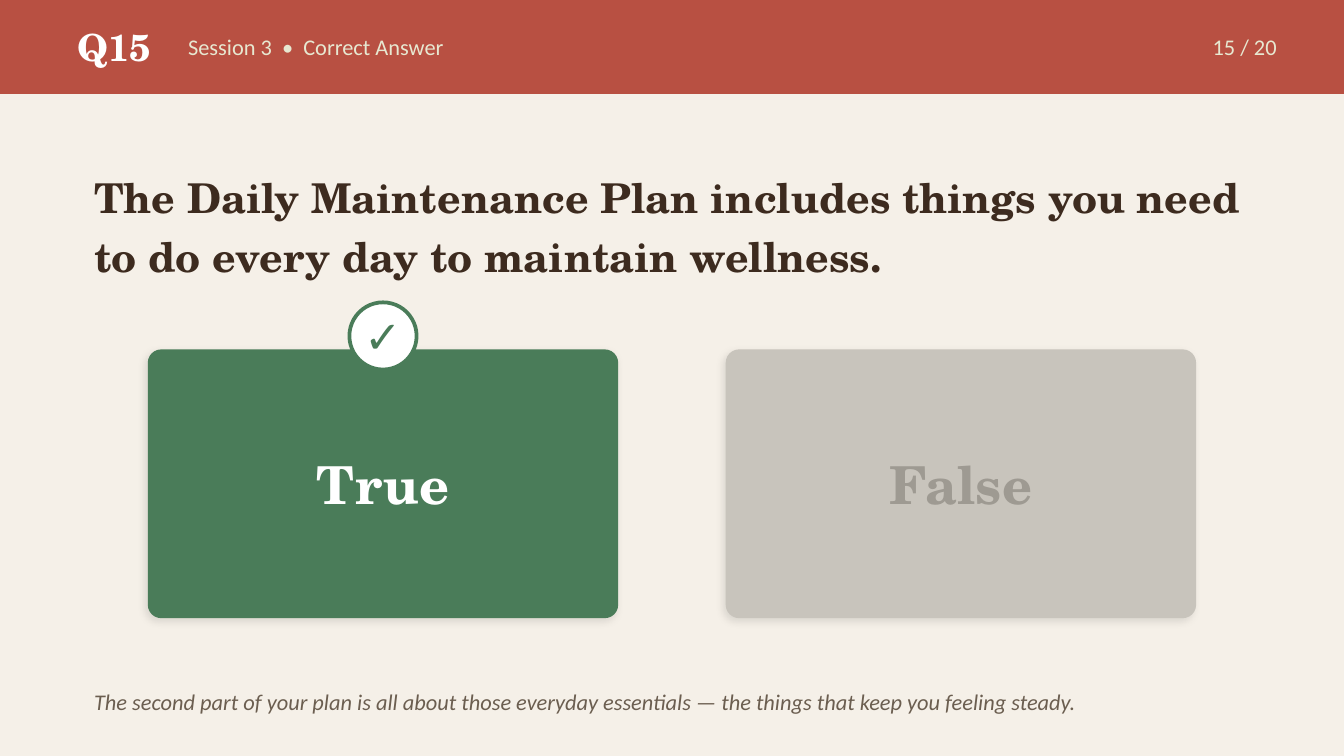
from dataclasses import dataclass
from lxml.etree import SubElement
from pptx import Presentation
from pptx.dml.color import RGBColor
from pptx.enum.shapes import MSO_SHAPE
from pptx.enum.text import MSO_ANCHOR, MSO_AUTO_SIZE, PP_ALIGN
from pptx.oxml.ns import qn
from pptx.util import Pt


@dataclass(frozen=True)
class Theme:
    """Hold the colours, fonts and type sizes."""
    paper: str = "F5F0E8"
    brick: str = "B85042"
    cream: str = "E7E8D1"
    white: str = "FFFFFF"
    ink: str = "3D2B1F"
    green: str = "4A7C59"
    stone: str = "C8C4BC"
    ash: str = "9E9A92"
    umber: str = "6B5E50"
    serif: str = "TeX Gyre Schola"
    sans: str = "Calibri"
    small: int = 12
    badge: int = 20
    head: int = 22
    tick: int = 24
    answer: int = 28


def write(frame, text, *, size, color, font, bold=False, italic=False,
          align=PP_ALIGN.LEFT, anchor=MSO_ANCHOR.MIDDLE, lead=None):
    """Fill a text frame with one styled paragraph."""
    frame.word_wrap = True
    frame.auto_size = MSO_AUTO_SIZE.NONE
    frame.vertical_anchor = anchor
    frame.margin_left = frame.margin_right = 0
    frame.margin_top = frame.margin_bottom = 0
    line = frame.paragraphs[0]
    line.alignment = align
    line.space_before = Pt(0)
    if lead:
        line.line_spacing = lead
    run = line.add_run()
    run.text = text
    run.font.name = font
    run.font.size = Pt(size)
    run.font.bold = bold
    run.font.italic = italic
    run.font.color.rgb = RGBColor.from_string(color)


class Deck:
    """Draw styled parts on the current slide."""

    def __init__(self, theme, wide, high):
        """Start a deck of the given size."""
        self.theme = theme
        self.file = Presentation()
        self.file.slide_width = Pt(wide)
        self.file.slide_height = Pt(high)
        self.slide = None

    def page(self):
        """Add a slide with a title and a plain ground."""
        self.slide = self.file.slides.add_slide(self.file.slide_layouts[5])
        fill = self.slide.background.fill
        fill.solid()
        fill.fore_color.rgb = RGBColor.from_string(self.theme.paper)

    def title(self, text, box, **style):
        """Place and fill the title."""
        head = self.slide.shapes.title
        head.left, head.top, head.width, head.height = map(Pt, box)
        write(head.text_frame, text, **style)

    def text(self, text, box, **style):
        """Add a text box."""
        area = self.slide.shapes.add_textbox(*map(Pt, box))
        write(area.text_frame, text, **style)

    def shape(self, kind, box, color, edge=None):
        """Add a flat shape, with an edge if one is named."""
        form = self.slide.shapes.add_shape(kind, *map(Pt, box))
        form.shadow.inherit = False
        form.fill.solid()
        form.fill.fore_color.rgb = RGBColor.from_string(color)
        if edge:
            form.line.color.rgb = RGBColor.from_string(edge)
            form.line.width = Pt(2)
        else:
            form.line.fill.background()
        return form

    def card(self, text, box, fill, color):
        """Add a rounded answer card with a soft shadow."""
        form = self.shape(MSO_SHAPE.ROUNDED_RECTANGLE, box, fill)
        form.adjustments[0] = 0.05
        glow = form.element.spPr.find(qn("a:effectLst"))
        drop = SubElement(glow, qn("a:outerShdw"), blurRad=str(Pt(4)),
                          dist=str(Pt(2)), dir=str(135 * 60000),
                          algn="bl", rotWithShape="0")
        tint = SubElement(drop, qn("a:srgbClr"), val="000000")
        SubElement(tint, qn("a:alpha"), val="10000")
        write(form.text_frame, text, size=self.theme.answer, color=color,
              font=self.theme.serif, bold=True, align=PP_ALIGN.CENTER)

    def mark(self, left, top, side):
        """Add the round tick mark."""
        theme = self.theme
        form = self.shape(MSO_SHAPE.OVAL, (left, top, side, side),
                          theme.white, theme.green)
        write(form.text_frame, "✓", size=theme.tick, color=theme.green,
              font=theme.sans, bold=True, align=PP_ALIGN.CENTER)


def main():
    """Build the answer slide."""
    theme = Theme()
    wide, high = 720, 405
    deck = Deck(theme, wide, high)
    deck.page()

    deck.shape(MSO_SHAPE.RECTANGLE, (0, 0, wide, 50.4), theme.brick)
    top, tall = 5.76, 38.88
    pale = dict(size=theme.small, color=theme.cream, font=theme.sans)
    deck.text("Q15", (36, top, 50.4, tall), size=theme.badge,
              color=theme.white, font=theme.serif, bold=True,
              align=PP_ALIGN.CENTER)
    deck.text("Session 3  •  Correct Answer", (100.8, top, 360, tall), **pale)
    deck.text("15 / 20", (576, top, 108, tall), align=PP_ALIGN.RIGHT, **pale)

    edge = 50.4
    span = wide - 2 * edge
    deck.title("The Daily Maintenance Plan includes things you need to do "
               "every day to maintain wellness.", (edge, 79.2, span, 79.2),
               size=theme.head, color=theme.ink, font=theme.serif,
               bold=True, lead=1.2)

    left, top, broad, tall, gap = 79.2, 187.2, 252, 144, 57.6
    cards = (("True", theme.green, theme.white),
             ("False", theme.stone, theme.ash))
    for spot, (text, fill, color) in enumerate(cards):
        box = (left + spot * (broad + gap), top, broad, tall)
        deck.card(text, box, fill, color)
    side = 36
    deck.mark(left + (broad - side) / 2, 162, side)

    deck.text("The second part of your plan is all about those everyday "
              "essentials — the things that keep you feeling steady.",
              (edge, 366.48, span, 31.68), size=theme.small,
              color=theme.umber, font=theme.sans, italic=True,
              anchor=MSO_ANCHOR.TOP, lead=1.15)
    deck.file.save("out.pptx")


if __name__ == "__main__":
    main()
